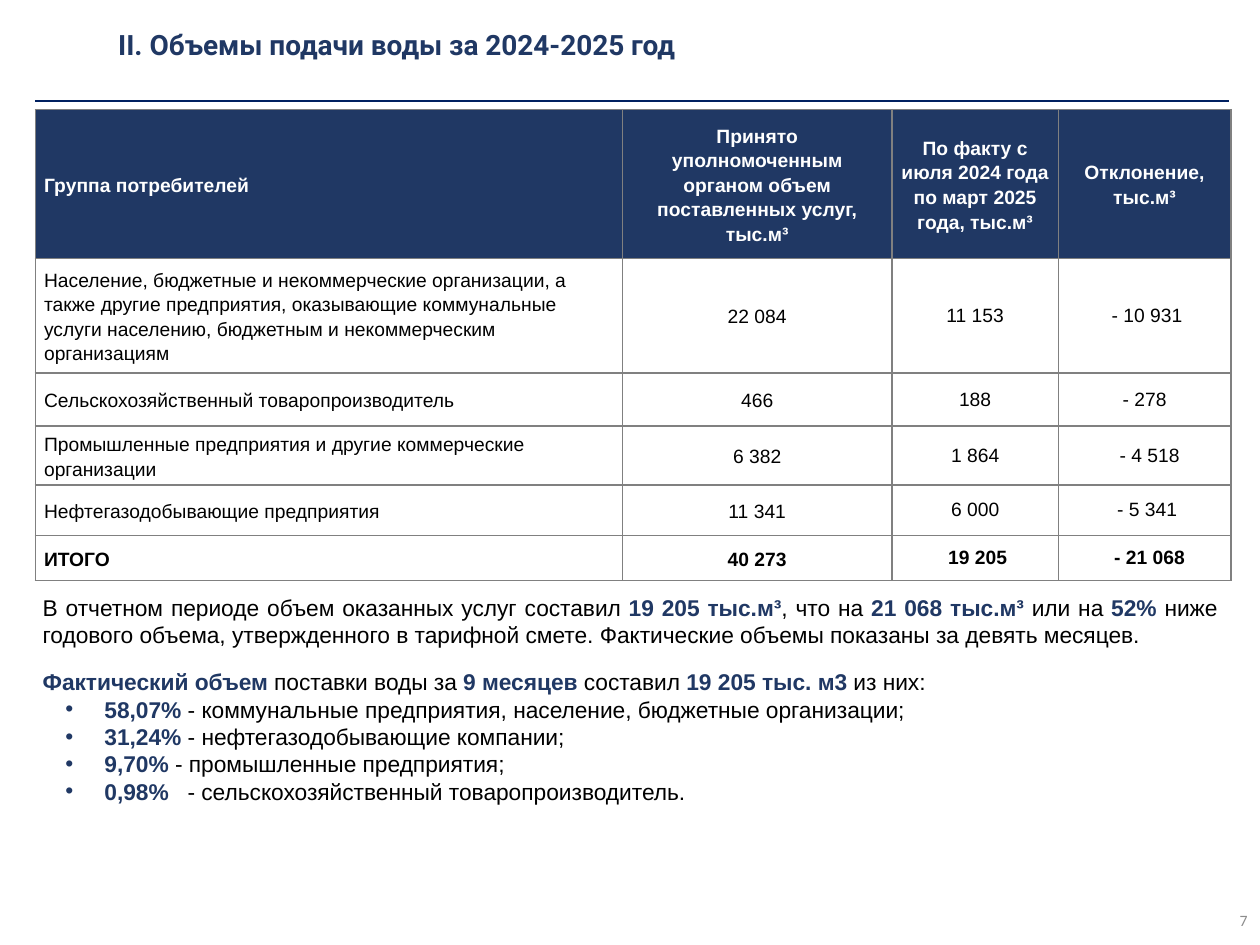
from dataclasses import dataclass

from lxml import etree
from pptx import Presentation
from pptx.dml.color import RGBColor
from pptx.enum import shapes, text
from pptx.oxml import ns
from pptx.util import Inches, Pt

NAVY = RGBColor(0x20, 0x38, 0x64)
RULE_BLUE = RGBColor(0x00, 0x20, 0x60)
GREY = RGBColor(0x80, 0x80, 0x80)
PAGE_GREY = RGBColor(0x8C, 0x8C, 0x8C)
WHITE = RGBColor(0xFF, 0xFF, 0xFF)
BLACK = RGBColor(0, 0, 0)

LEFT, CENTER = text.PP_ALIGN.LEFT, text.PP_ALIGN.CENTER
JUSTIFY, RIGHT = text.PP_ALIGN.JUSTIFY, text.PP_ALIGN.RIGHT
TOP, MIDDLE = text.MSO_ANCHOR.TOP, text.MSO_ANCHOR.MIDDLE


@dataclass(frozen=True)
class Style:
    size: float
    color: RGBColor
    bold: bool = False
    name: str = "Arial"


@dataclass(frozen=True)
class SupplyRow:
    group: str
    accepted: str
    actual: str
    deviation: str
    height: float
    actual_shift: float = 0
    deviation_shift: float = 0
    bold: bool = False


HEADERS = (
    "Группа потребителей",
    "Принято уполномоченным органом объем поставленных услуг, тыс.м³",
    "По факту с июля 2024 года по март 2025 года, тыс.м³",
    "Отклонение, тыс.м³",
)
HEADER_HEIGHT = 1.18
COLUMN_WIDTHS = (4.66, 2.14, 1.32, 1.37)
SUPPLY = (
    SupplyRow("Население, бюджетные и некоммерческие организации, а также другие предприятия, "
              "оказывающие коммунальные услуги населению, бюджетным и некоммерческим организациям",
              "22 084", "11 153", "- 10 931", 0.91, deviation_shift=0.04),
    SupplyRow("Сельскохозяйственный товаропроизводитель", "466", "188", "- 278", 0.42),
    SupplyRow("Промышленные предприятия и другие коммерческие организации",
              "6 382", "1 864", "- 4 518", 0.47, deviation_shift=0.08),
    SupplyRow("Нефтегазодобывающие предприятия", "11 341", "6 000", "- 5 341", 0.4,
              deviation_shift=0.04),
    SupplyRow("ИТОГО", "40 273", "19 205", "- 21 068", 0.36, 0.04, 0.08, True),
)

# Parts between asterisks are highlighted.
SUMMARY = (
    "В отчетном периоде объем оказанных услуг составил *19 205 тыс.м³*, что на "
    "*21 068 тыс.м³ *или на *52% *ниже годового объема, утвержденного в тарифной смете. "
    "Фактические объемы показаны за девять месяцев.",
    "*Фактический объем* поставки воды за *9 месяцев *составил *19 205 тыс. м3 *из них:",
)
SHARES = (
    "*58,07% *- коммунальные предприятия, население, бюджетные организации;",
    "*31,24% *- нефтегазодобывающие компании;",
    "*9,70%* - промышленные предприятия;",
    "*0,98%*\t- сельскохозяйственный товаропроизводитель.",
)
PLAIN = Style(13, BLACK)
HIGHLIGHT = Style(13, NAVY, True)


def add_run(paragraph, words: str, style: Style) -> None:
    run = paragraph.add_run()
    run.text = words
    for key in ("size", "bold", "name"):
        value = getattr(style, key)
        setattr(run.font, key, Pt(value) if key == "size" else value)
    run.font.color.rgb = style.color


def add_marked_runs(paragraph, marked: str) -> None:
    for index, words in enumerate(marked.split("*")):
        if words:
            add_run(paragraph, words, HIGHLIGHT if index % 2 else PLAIN)


def add_frame(slide, left: float, top: float, width: float, height: float, anchor):
    box = slide.shapes.add_textbox(Inches(left), Inches(top), Inches(width), Inches(height))
    box.text_frame.word_wrap = True
    box.text_frame.vertical_anchor = anchor
    return box.text_frame


def add_label(slide, words: str, style: Style, align, *area: float) -> None:
    paragraph = add_frame(slide, *area, MIDDLE).paragraphs[0]
    paragraph.alignment = align
    add_run(paragraph, words, style)


def set_bullet(paragraph) -> None:
    properties = paragraph._p.get_or_add_pPr()
    properties.set("marL", str(Inches(0.49)))
    properties.set("indent", str(Inches(-0.31)))
    etree.SubElement(properties, ns.qn("a:buFont"), typeface="Arial")
    etree.SubElement(properties, ns.qn("a:buChar"), char="•")
    tabs = etree.SubElement(properties, ns.qn("a:tabLst"))
    etree.SubElement(tabs, ns.qn("a:tab"), pos=str(Inches(1.15)), algn="l")


def set_borders(cell) -> None:
    properties = cell._tc.get_or_add_tcPr()
    for index, side in enumerate(("lnL", "lnR", "lnT", "lnB")):
        line = etree.Element(ns.qn(f"a:{side}"), w=str(Pt(1)))
        fill = etree.SubElement(line, ns.qn("a:solidFill"))
        etree.SubElement(fill, ns.qn("a:srgbClr"), val=str(GREY))
        properties.insert(index, line)


def fill_cell(cell, words: str, style: Style, align, fill=None,
              spacing: float = 1.15, inset: float = 0.07, shift: float = 0) -> None:
    margins = {"margin_left": inset + shift, "margin_right": inset,
               "margin_top": 0, "margin_bottom": 0}
    for key, value in margins.items():
        setattr(cell, key, Inches(value))
    cell.vertical_anchor = MIDDLE
    if fill is None:
        cell.fill.background()
    else:
        cell.fill.solid()
        cell.fill.fore_color.rgb = fill
    set_borders(cell)
    paragraph = cell.text_frame.paragraphs[0]
    paragraph.alignment = align
    paragraph.line_spacing = spacing
    add_run(paragraph, words, style)


def add_supply_table(slide) -> None:
    heights = (HEADER_HEIGHT, *(row.height for row in SUPPLY))
    table = slide.shapes.add_table(
        len(heights), len(COLUMN_WIDTHS), Inches(0.28), Inches(0.87),
        Inches(sum(COLUMN_WIDTHS)), Inches(sum(heights))).table
    table.first_row = table.horz_banding = False
    for column, width in zip(table.columns, COLUMN_WIDTHS):
        column.width = Inches(width)
    for table_row, height in zip(table.rows, heights):
        table_row.height = Inches(height)

    for index, header in enumerate(HEADERS):
        fill_cell(table.cell(0, index), header, Style(11, WHITE, True),
                  CENTER if index else LEFT, NAVY)
    for index, row in enumerate(SUPPLY, 1):
        style = Style(11, BLACK, row.bold)
        fill_cell(table.cell(index, 0), row.group, style, LEFT)
        fill_cell(table.cell(index, 1), row.accepted, style, CENTER)
        figures = ((row.actual, row.actual_shift), (row.deviation, row.deviation_shift))
        for column, (figure, shift) in enumerate(figures, 2):
            fill_cell(table.cell(index, column), figure, style, CENTER,
                      spacing=1, inset=0.01, shift=shift)


def add_summary(slide) -> None:
    frame = add_frame(slide, 0.24, 4.66, 9.52, 1.82, TOP)
    for index, marked in enumerate(SUMMARY + SHARES):
        paragraph = frame.add_paragraph() if index else frame.paragraphs[0]
        paragraph.alignment = JUSTIFY
        if index == 1:
            paragraph.space_before = Pt(11.5)
        if marked in SHARES:
            set_bullet(paragraph)
        add_marked_runs(paragraph, marked)


def add_title_rule(slide) -> None:
    rule = slide.shapes.add_connector(shapes.MSO_CONNECTOR.STRAIGHT,
                                      Inches(0.28), Inches(0.8), Inches(9.75), Inches(0.8))
    rule.line.color.rgb = RULE_BLUE
    rule.line.width = Pt(1)
    etree.SubElement(rule._element.spPr, ns.qn("a:effectLst"))


def main() -> None:
    deck = Presentation()
    deck.slide_width, deck.slide_height = Inches(10), Inches(7.5)
    slide = deck.slides.add_slide(deck.slide_layouts[6])
    add_supply_table(slide)
    add_summary(slide)
    add_label(slide, "7", Style(9, PAGE_GREY, name="Calibri"), RIGHT, 7.75, 7.1, 2.25, 0.4)
    add_label(slide, "II. Объемы подачи воды за 2024-2025 год",
              Style(16, NAVY, True, "Roboto"), LEFT, 0.84, 0.14, 8.93, 0.42)
    add_title_rule(slide)
    deck.save("out.pptx")


if __name__ == "__main__":
    main()
